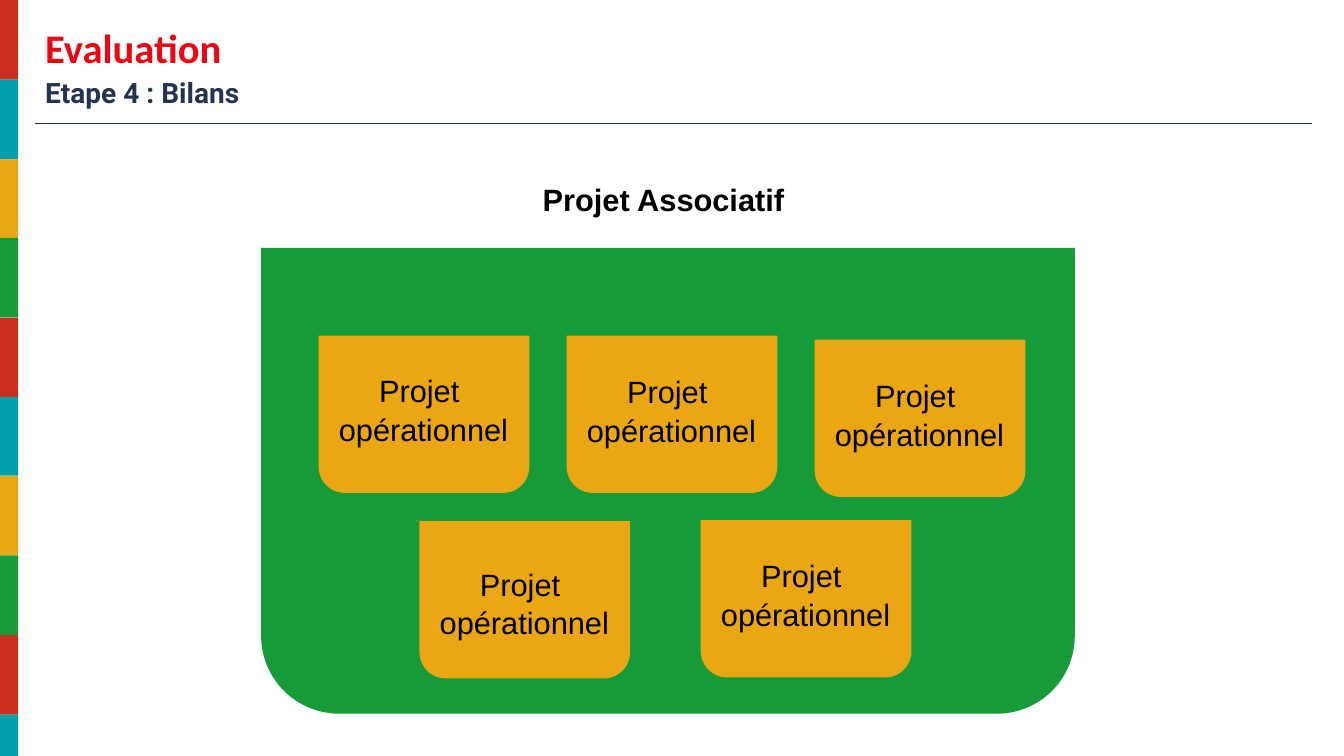
from itertools import cycle, islice
from pptx import Presentation
from pptx.dml.color import RGBColor
from pptx.enum.shapes import MSO_CONNECTOR as Connector, MSO_SHAPE as Shape
from pptx.enum.text import MSO_ANCHOR as Anchor, PP_ALIGN as Align
from pptx.oxml import parse_xml
from pptx.oxml.ns import nsdecls
from pptx.util import Pt

EMU_PER_PX = 9144
WIDTH, HEIGHT = 1333, 750

RED = RGBColor(0xC9, 0x2F, 0x20)
TEAL = RGBColor(0x00, 0xA1, 0xAC)
AMBER = RGBColor(0xEB, 0xA6, 0x13)
GREEN = RGBColor(0x17, 0x9A, 0x38)
TITLE_RED = RGBColor(0xEC, 0x06, 0x14)
NAVY = RGBColor(0x23, 0x33, 0x52)
RULE_NAVY = RGBColor(0x21, 0x30, 0x4E)
BLACK = RGBColor(0, 0, 0)

STRIPE_COUNT, STRIPE_STEP = 10, 78.75
CARD_WIDTH, CARD_HEIGHT = 209, 156
LABEL_WIDTH = 392
CARDS = [(316, 333, 24), (416, 517, 32), (562, 333, 25), (695, 516, 25), (808, 337, 25)]


def px(length):
    return int(length * EMU_PER_PX)


class SlideBuilder:
    """Draws the elements of the current slide in one style."""

    def __init__(self, slide):
        self.slide = slide

    def block(self, kind, left, top, width, height, color):
        shape = self.slide.shapes.add_shape(kind, px(left), px(top), px(width), px(height))
        shape.shadow.inherit = False
        shape.fill.solid()
        shape.fill.fore_color.rgb = color
        shape.line.fill.background()
        return shape

    def tray(self, left, top, width, height, color):
        shape = self.block(Shape.ROUND_2_SAME_RECTANGLE, left, top, width, height, color)
        shape.rotation = 180
        shape.adjustments[0] = 0.167
        shape.adjustments[1] = 0

    def rule(self, left, right, top):
        line = self.slide.shapes.add_connector(
            Connector.STRAIGHT, px(left), px(top), px(right), px(top))
        line.line.color.rgb = RULE_NAVY
        line.line.width = Pt(0.75)
        line._element.spPr.append(parse_xml(f"<a:effectLst {nsdecls('a')}/>"))

    def text(self, lines, left, top, width, height, *, size=22, font="Arial", color=BLACK,
             bold=False, align=Align.CENTER, anchor=Anchor.TOP, margin=10, spacing=1.05):
        box = self.slide.shapes.add_textbox(px(left), px(top), px(width), px(height))
        frame = box.text_frame
        frame.word_wrap = True
        frame.vertical_anchor = anchor
        frame.margin_left = frame.margin_right = px(10)
        frame.margin_top = frame.margin_bottom = px(margin)
        frame.text = lines
        for paragraph in frame.paragraphs:
            paragraph.alignment = align
            paragraph.line_spacing = spacing
            paragraph.font.size = Pt(size)
            paragraph.font.name = font
            paragraph.font.bold = bold
            paragraph.font.color.rgb = color

    def side_stripes(self):
        colors = islice(cycle([RED, TEAL, AMBER, GREEN]), STRIPE_COUNT)
        for index, color in enumerate(colors):
            top = round(index * STRIPE_STEP)
            bottom = min(round((index + 1) * STRIPE_STEP), HEIGHT)
            self.block(Shape.RECTANGLE, -2, top, 20, bottom - top, color)

    def project_card(self, left, top, label_drop):
        self.tray(left, top, CARD_WIDTH, CARD_HEIGHT, AMBER)
        label_left = left + (CARD_WIDTH - LABEL_WIDTH) // 2
        self.text("Projet \nopérationnel", label_left, top + label_drop, LABEL_WIDTH, 94)


def main():
    presentation = Presentation()
    presentation.slide_width, presentation.slide_height = px(WIDTH), px(HEIGHT)
    builder = SlideBuilder(presentation.slides.add_slide(presentation.slide_layouts[6]))

    builder.side_stripes()
    heading = dict(bold=True, align=Align.LEFT, margin=5, spacing=1.0)
    builder.text("Evaluation", 35, 14, 1266, 65, size=29, font="Calibri",
                 color=TITLE_RED, anchor=Anchor.MIDDLE, **heading)
    builder.text("Etape 4 : Bilans", 35, 70, 1182, 44, size=20, font="Roboto",
                 color=NAVY, **heading)
    builder.rule(35, 1301, 123)

    builder.tray(259, 246, 807, 462, GREEN)
    for card in CARDS:
        builder.project_card(*card)
    builder.text("Projet Associatif", 462, 167, LABEL_WIDTH, 57, bold=True)

    presentation.save("out.pptx")


if __name__ == "__main__":
    main()
